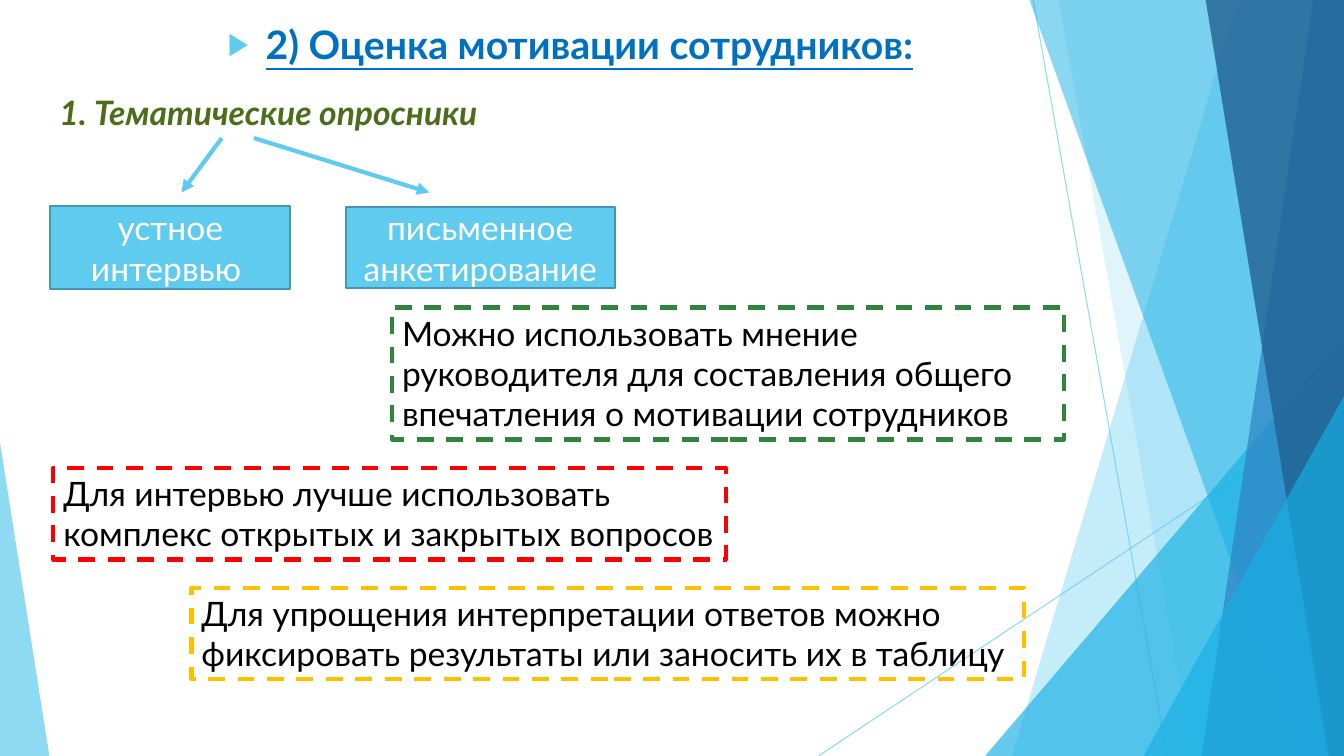
from pptx import Presentation, util as u
from pptx.dml import color as col
from pptx.enum import dml, shapes as sh, text as tx
from pptx.oxml import ns, xmlchemy as xc

Pt = u.Pt
SKY, AQUA = "5FCBEF", "17B0E4"


def add(node, tag, **attrs):
    item = xc.OxmlElement(tag)
    for key, val in attrs.items():
        item.set(key, str(val))
    node.append(item)
    return item


def paint(form, hue, alpha=100):
    form.solid()
    form.fore_color.rgb = col.RGBColor.from_string(hue)
    if alpha < 100:
        clr = form._xPr.find(ns.qn("a:solidFill"))[0]
        add(clr, "a:alpha", val=alpha * 1000)


def tint(shape, hue, alpha):
    shape.shadow.inherit = False
    paint(shape.fill, hue, alpha)
    shape.line.fill.background()


def link(slide, start, end, width, alpha=100, arrow=False):
    line = slide.shapes.add_connector(
        sh.MSO_CONNECTOR.STRAIGHT, *[Pt(v) for v in (*start, *end)])
    line.line.width = Pt(width)
    paint(line.line.fill, SKY, alpha)
    if arrow:
        add(line.line._get_or_add_ln(), "a:tailEnd", type="triangle")
    add(line._element.spPr, "a:effectLst")


def write(para, words, size, hue, bold=False, slant=False, under=False):
    run = para.add_run()
    run.text = words
    font = run.font
    font.name, font.size = "Lato", Pt(size)
    font.bold, font.italic, font.underline = bold, slant, under
    paint(font.fill, hue)


def wedge(slide, box, wide, high, hue, alpha, peak):
    x, y, w, h = box
    left = x + w - wide if peak else x
    tri = slide.shapes.add_shape(
        sh.MSO_SHAPE.ISOSCELES_TRIANGLE,
        Pt(left), Pt(y + h - high), Pt(wide), Pt(high))
    tri.adjustments[0] = peak
    tint(tri, hue, alpha)


def band(slide, box, top, base, hue, alpha):
    x, y, w, h = box
    right, low = x + w, y + h
    pen = slide.shapes.build_freeform(Pt(right - top), Pt(y - 0.72), 1.0)
    spots = [(right, y - 0.72), (right, low), (right - base, low)]
    pen.add_line_segments([(Pt(a), Pt(b)) for a, b in spots])
    tint(pen.convert_to_shape(), hue, alpha)


def facets(slide, box):
    x, y, w, h = box
    right, low = x + w, y + h
    link(slide, (right - 222, y), (right - 126.24, low), 0.75, 70)
    link(slide, (right, y + 290.16), (x, low), 0.75, 70)
    band(slide, box, 75.84, 237.12, SKY, 36)
    band(slide, box, 204, 108.24, SKY, 20)
    wedge(slide, box, 256.32, 300.24, AQUA, 66, 1)
    band(slide, box, 224.88, 30.48, AQUA, 50)
    band(slide, box, 21.84, 101.76, "2E83C3", 70)
    band(slide, box, 98.88, 11.04, "226292", 80)
    wedge(slide, box, 143.28, 257.04, AQUA, 66, 1)


def label(slide, box, wrap=True):
    item = slide.shapes.add_textbox(*[Pt(v) for v in box])
    item.text_frame.word_wrap = wrap
    return item.text_frame.paragraphs[0]


def title(slide, box):
    para = label(slide, box)
    para.alignment = tx.PP_ALIGN.CENTER
    props = para._p.get_or_add_pPr()
    props.set("marL", str(Pt(27)))
    props.set("indent", str(-Pt(27)))
    add(add(props, "a:buClr"), "a:srgbClr", val=SKY)
    add(props, "a:buSzPct", val=80000)
    add(props, "a:buFont", typeface="Arial")
    add(props, "a:buChar", char="▶")
    write(para, "2) Оценка мотивации сотрудников:", 28, "0070C0",
          bold=True, under=True)


def panel(slide, box, words, hue, edge, width, fill=None):
    rect = slide.shapes.add_shape(
        sh.MSO_SHAPE.RECTANGLE, *[Pt(v) for v in box])
    rect.shadow.inherit = False
    paint(rect.line.fill, edge)
    rect.line.width = Pt(width)
    frame = rect.text_frame
    frame.word_wrap = True
    para = frame.paragraphs[0]
    if fill:
        paint(rect.fill, fill)
        frame.vertical_anchor = tx.MSO_ANCHOR.MIDDLE
        para.alignment = tx.PP_ALIGN.CENTER
    else:
        rect.fill.background()
        rect.line.dash_style = dml.MSO_LINE.DASH
        frame.vertical_anchor = tx.MSO_ANCHOR.TOP
        para.alignment = tx.PP_ALIGN.LEFT
    write(para, words, 24, hue)


def survey(slide, box):
    x, y, w, h = box
    para = label(slide, (x, y, 350.64, 36), wrap=False)
    write(para, "1. Тематические опросники", 24, "4C6E1B",
          bold=True, slant=True)
    kinds = [("устное интервью ", 0.72, 84.96, 171.36, 59.76),
             ("письменное анкетирование", 211.68, 85.68, w - 211.68, 58.32)]
    for words, left, top, wide, high in kinds:
        panel(slide, (x + left, y + top, wide, high), words,
              "FFFFFF", "4696B1", 1.5, SKY)
    for start, end in ((123.12, 94.32), (146.16, 271.44)):
        link(slide, (x + start, y + 36.72), (x + end, y + 75.6), 3, arrow=True)


def advice(slide, box):
    x, y, w, h = box
    notes = [
        ("Можно использовать мнение руководителя для составления общего "
         "впечатления о мотивации сотрудников",
         "31843D", 241.92, 0, 480.24, 94.32),
        ("Для интервью лучше использовать комплекс открытых и закрытых "
         "вопросов", "FF0000", 0, 114.48, 480.24, 65.52),
        ("Для упрощения интерпретации ответов можно фиксировать результаты "
         "или заносить их в таблицу",
         "FFC000", 98.64, h - 65.52, 594.72, 65.52)]
    for words, edge, left, top, wide, high in notes:
        panel(slide, (x + left, y + top, wide, high), words,
              "000000", edge, 3)


def main():
    deck = Presentation()
    deck.slide_width, deck.slide_height = Pt(960), Pt(540)
    slide = deck.slides.add_slide(deck.slide_layouts[6])
    facets(slide, (584.64, 0, 375.36, 540))
    wedge(slide, (0, 0, 960, 540), 35.28, 223.92, SKY, 70, 0)
    title(slide, (69.12, 10.8, 676.8, 36.72))
    survey(slide, (35.28, 61.92, 403.92, 144))
    advice(slide, (38.16, 219.6, 722.16, 265.68))
    deck.save("out.pptx")


if __name__ == "__main__":
    main()
